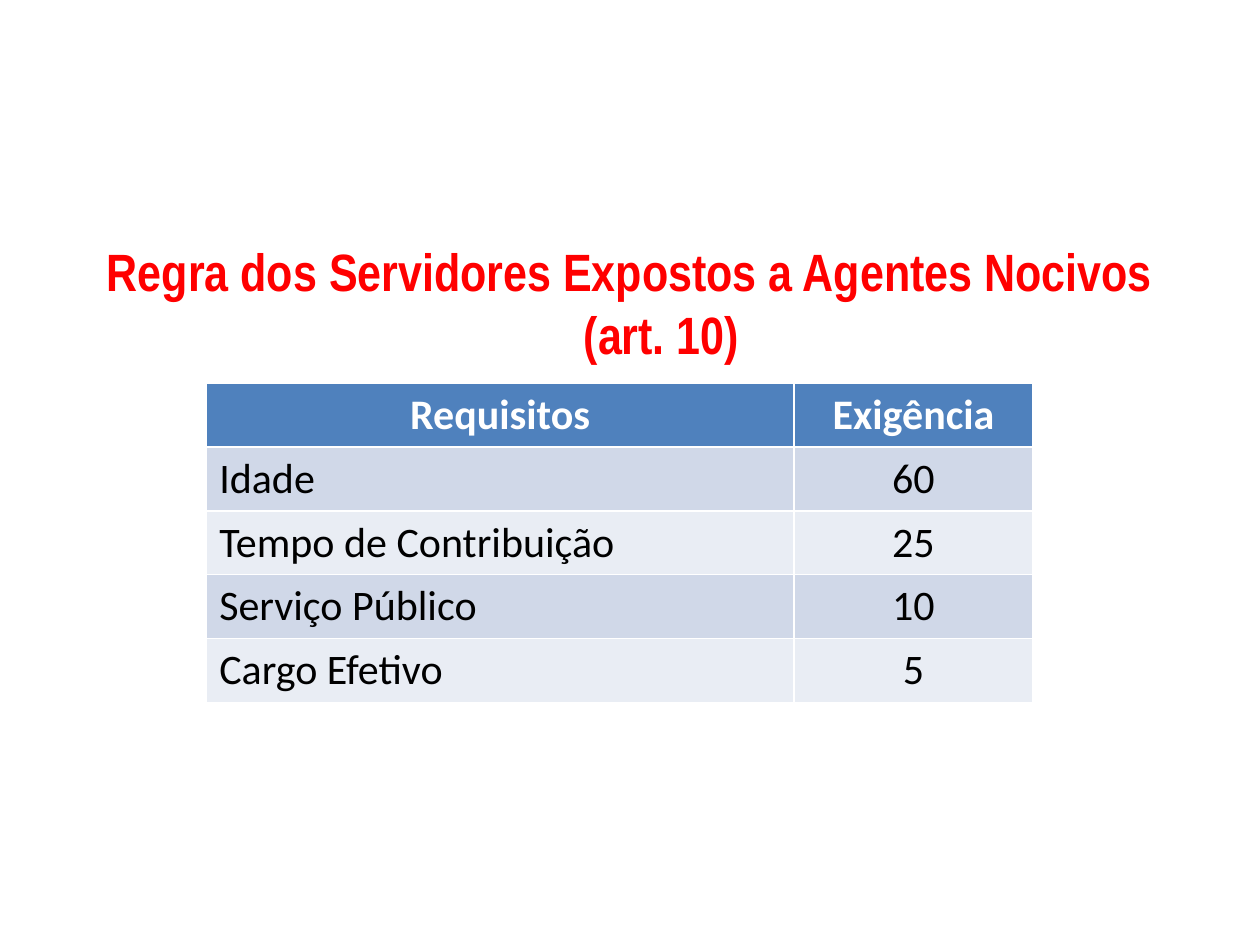
from pptx import Presentation
from pptx.dml.color import RGBColor
from pptx.enum.text import MSO_ANCHOR, MSO_AUTO_SIZE, PP_ALIGN
from pptx.util import Inches, Pt

TITLE = "Regra dos Servidores Expostos a Agentes Nocivos (art. 10)"
ROWS = [
    ("Requisitos", "Exigência"),
    ("Idade", "60"),
    ("Tempo de Contribuição", "25"),
    ("Serviço Público", "10"),
    ("Cargo Efetivo", "5"),
]
COL_WIDTHS = (4.66, 1.9)
ROW_HEIGHT = 0.5

RED = RGBColor(0xFF, 0x00, 0x00)
WHITE = RGBColor(0xFF, 0xFF, 0xFF)
BLACK = RGBColor(0x00, 0x00, 0x00)
HEADER = RGBColor(0x4F, 0x81, 0xBD)
BANDS = (RGBColor(0xE9, 0xED, 0xF4), RGBColor(0xD0, 0xD8, 0xE8))


def style_runs(p, name, size, color, bold):
    for r in p.runs:
        r.font.name = name
        r.font.size = Pt(size)
        r.font.color.rgb = color
        r.font.bold = bold


def add_title(s):
    sp = s.shapes.title
    sp.left, sp.top, sp.width, sp.height = map(Inches, (0.59, 1.85, 8.82, 1.65))
    tf = sp.text_frame
    tf.text = TITLE
    tf.word_wrap = True
    tf.auto_size = MSO_AUTO_SIZE.NONE
    tf.vertical_anchor = MSO_ANCHOR.TOP
    p = tf.paragraphs[0]
    p.alignment = PP_ALIGN.CENTER
    pPr = p._p.get_or_add_pPr()
    pPr.set("marL", str(Inches(0.5)))
    pPr.set("indent", str(Inches(-0.5)))
    style_runs(p, "Arial Narrow", 30, RED, True)


def add_requirements(s):
    size = (sum(COL_WIDTHS), ROW_HEIGHT * len(ROWS))
    table = s.shapes.add_table(len(ROWS), len(COL_WIDTHS),
                               *map(Inches, (1.64, 3.04, *size))).table
    for col, width in zip(table.columns, COL_WIDTHS):
        col.width = Inches(width)
    for i, row in enumerate(ROWS):
        header = i == 0
        for j, text in enumerate(row):
            cell = table.cell(i, j)
            cell.text = text
            cell.fill.solid()
            cell.fill.fore_color.rgb = HEADER if header else BANDS[i % 2]
            p = cell.text_frame.paragraphs[0]
            p.alignment = PP_ALIGN.CENTER if header or j else PP_ALIGN.LEFT
            style_runs(p, "Calibri", 24, WHITE if header else BLACK, header)


def main():
    prs = Presentation()
    prs.slide_width, prs.slide_height = Inches(10), Inches(7.5)
    s = prs.slides.add_slide(prs.slide_layouts[5])
    add_title(s)
    add_requirements(s)
    prs.save("out.pptx")


if __name__ == "__main__":
    main()
